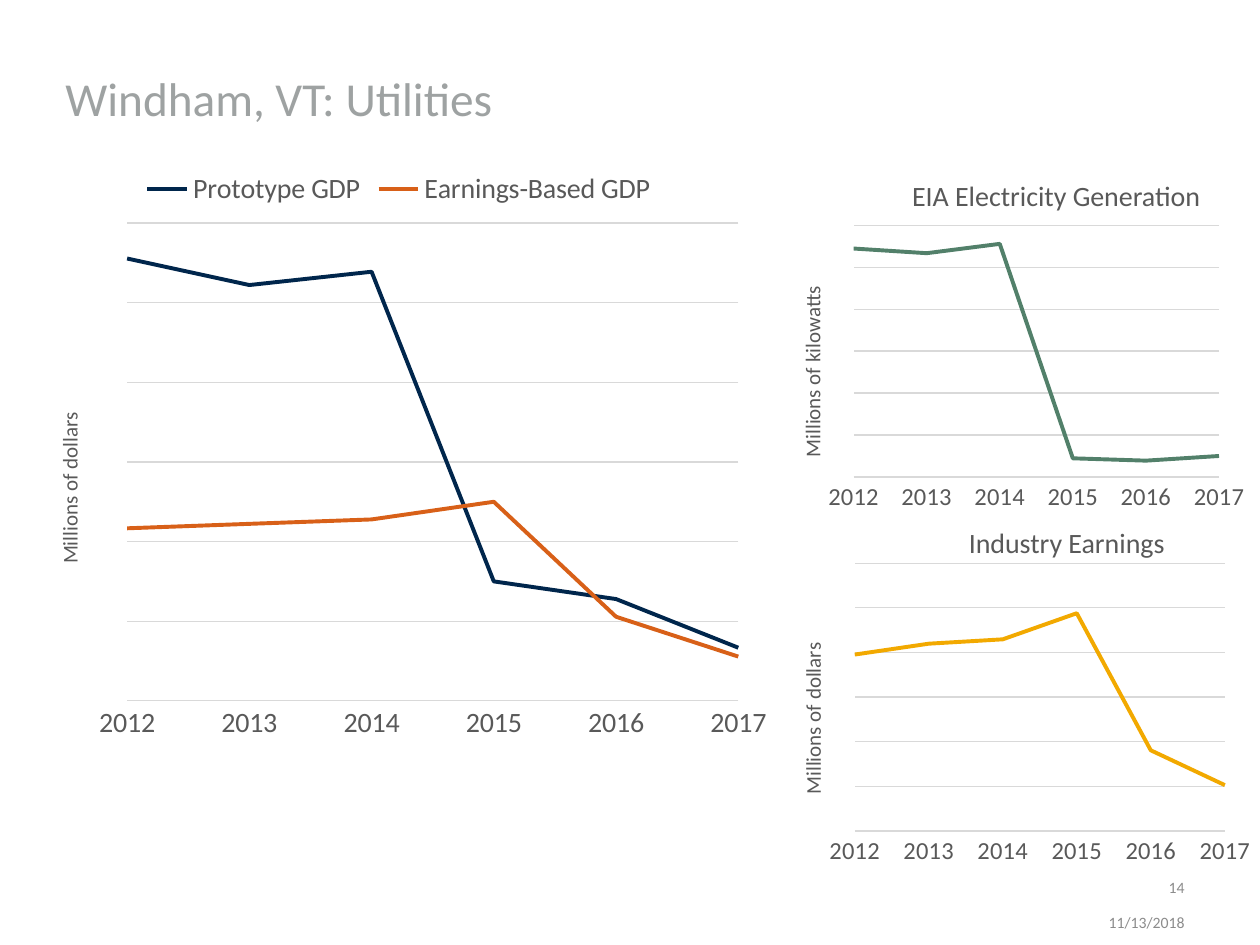
from lxml import etree
from pptx import Presentation
from pptx.chart.data import CategoryChartData
from pptx.dml.color import RGBColor
from pptx.enum.chart import XL_CHART_TYPE, XL_LEGEND_POSITION, XL_TICK_LABEL_POSITION, XL_TICK_MARK
from pptx.enum.text import MSO_ANCHOR, PP_ALIGN
from pptx.oxml.ns import qn
from pptx.util import Inches, Pt

LINE = XL_CHART_TYPE.LINE
TOP = XL_LEGEND_POSITION.TOP
NO_LABELS = XL_TICK_LABEL_POSITION.NONE
NO_TICK, TICK_OUT = XL_TICK_MARK.NONE, XL_TICK_MARK.OUTSIDE
LEFT, RIGHT = PP_ALIGN.LEFT, PP_ALIGN.RIGHT
MIDDLE, ANCHOR_TOP = MSO_ANCHOR.MIDDLE, MSO_ANCHOR.TOP

FONT = "Calibri"
COLORS = {
    "title": "9EA2A2", "text": "595959", "footer": "8C8C8C", "grid": "D9D9D9",
    "navy": "00264C", "orange": "D86018", "green": "52806A", "gold": "F2A900",
}
YEARS = ["2012", "2013", "2014", "2015", "2016", "2017"]

deck = Presentation()
deck.slide_width, deck.slide_height = Inches(10), Inches(7.5)
page = deck.slides.add_slide(deck.slide_layouts[6])


def add_text(text, at, size, color="text", align=LEFT, anchor=ANCHOR_TOP, bottom=0.05):
    box = page.shapes.add_textbox(*[Inches(length) for length in at])
    frame = box.text_frame
    frame.word_wrap = True
    frame.vertical_anchor = anchor
    frame.margin_bottom = Inches(bottom)
    para = frame.paragraphs[0]
    para.alignment = align
    span = para.add_run()
    span.text = text
    span.font.name = FONT
    span.font.size = Pt(size)
    span.font.color.rgb = RGBColor.from_string(COLORS[color])


def set_layout(parent, index, **settings):
    for old in parent.findall(qn("c:layout")):
        parent.remove(old)
    layout = etree.Element(qn("c:layout"))
    manual = etree.SubElement(layout, qn("c:manualLayout"))
    for name, value in settings.items():
        etree.SubElement(manual, qn("c:" + name)).set("val", str(value))
    parent.insert(index, layout)


charts = [
    {"at": (0.17, 1.25, 5.99, 4.74), "size": 16, "unit": "Millions of dollars",
     "format": '"$"#,##0', "step": 18, "legend": True,
     "plot": (0.14, 0.11, 0.81, 0.8), "title": (0.04, 0.42),
     "series": [("Prototype GDP", [100, 94, 97, 27, 23, 12], "navy"),
                ("Earnings-Based GDP", [39, 40, 41, 45, 19, 10], "orange")]},
    {"at": (6.03, 1.74, 3.92, 2.38), "size": 14, "unit": "Millions of kilowatts",
     "format": "#,##0", "step": 18, "legend": False,
     "plot": (0.19, 0.02, 0.74, 0.84), "title": (0.07, 0.21),
     "series": [("Series 1", [98, 96, 100, 8, 7, 9], "green")]},
    {"at": (6.03, 4.42, 3.97, 2.5), "size": 14, "unit": "Millions of dollars",
     "format": '"$"#,##0', "step": 20.5, "legend": False,
     "plot": (0.19, 0.02, 0.74, 0.85), "title": (0.07, 0.26),
     "series": [("Series 1", [81, 86, 88, 100, 37, 21], "gold")]},
]

text_color = RGBColor.from_string(COLORS["text"])
grid_color = RGBColor.from_string(COLORS["grid"])

for item in charts:
    data = CategoryChartData(number_format=item["format"])
    data.categories = YEARS
    for name, values, color in item["series"]:
        data.add_series(name, values)
    frame = page.shapes.add_chart(LINE, *[Inches(length) for length in item["at"]], data)
    chart = frame.chart
    chart.has_title = False
    chart.font.name = FONT
    chart.font.size = Pt(item["size"])
    chart.font.color.rgb = text_color
    chart.plots[0].vary_by_categories = False
    chart.has_legend = item["legend"]
    if item["legend"]:
        chart.legend.position = TOP
        chart.legend.include_in_layout = False

    for series, (name, values, color) in zip(chart.plots[0].series, item["series"]):
        series.smooth = False
        series.format.line.width = Pt(2.25)
        series.format.line.color.rgb = RGBColor.from_string(COLORS[color])

    years = chart.category_axis
    years.major_tick_mark = NO_TICK
    years.format.line.color.rgb = grid_color
    years.format.line.width = Pt(0.75)

    amounts = chart.value_axis
    amounts.minimum_scale = 0
    amounts.maximum_scale = 6 * item["step"]
    amounts.major_unit = item["step"]
    amounts.major_tick_mark = TICK_OUT
    amounts.tick_label_position = NO_LABELS
    amounts.tick_labels.number_format = item["format"]
    amounts.tick_labels.number_format_is_linked = False
    amounts.format.line.fill.background()
    amounts.major_gridlines.format.line.color.rgb = grid_color
    amounts.major_gridlines.format.line.width = Pt(0.75)
    axis_xml = amounts._element
    for old in axis_xml.findall(qn("c:crossBetween")):
        axis_xml.remove(old)
    crossing = etree.Element(qn("c:crossBetween"))
    crossing.set("val", "midCat")
    axis_xml.find(qn("c:crosses")).addnext(crossing)

    title_frame = amounts.axis_title.text_frame
    span = title_frame.paragraphs[0].add_run()
    span.text = item["unit"]
    span.font.name = FONT
    span.font.size = Pt(12)
    span.font.bold = False
    span.font.color.rgb = text_color
    title_xml = amounts.axis_title._element
    next(title_xml.iter(qn("a:bodyPr"))).set("rot", "-5400000")

    x, y = item["title"]
    set_layout(title_xml, 1, xMode="edge", yMode="edge", x=x, y=y)
    x, y, w, h = item["plot"]
    set_layout(chart._chartSpace.chart.plotArea, 0, layoutTarget="inner",
               xMode="edge", yMode="edge", x=x, y=y, w=w, h=h)

add_text("Windham, VT: Utilities", (0.42, 0.25, 7.58, 1), 27, color="title", anchor=MIDDLE, bottom=0)
add_text("EIA Electricity Generation", (7.14, 1.37, 2.67, 0.37), 16)
add_text("Industry Earnings", (7.59, 4.12, 2.22, 0.37), 16)
add_text("14", (8.92, 6.93, 0.58, 0.22), 9, color="footer", align=RIGHT, anchor=MIDDLE)
add_text("11/13/2018", (8.42, 7.23, 1.08, 0.18), 9, color="footer", align=RIGHT, anchor=MIDDLE)

deck.save("out.pptx")
